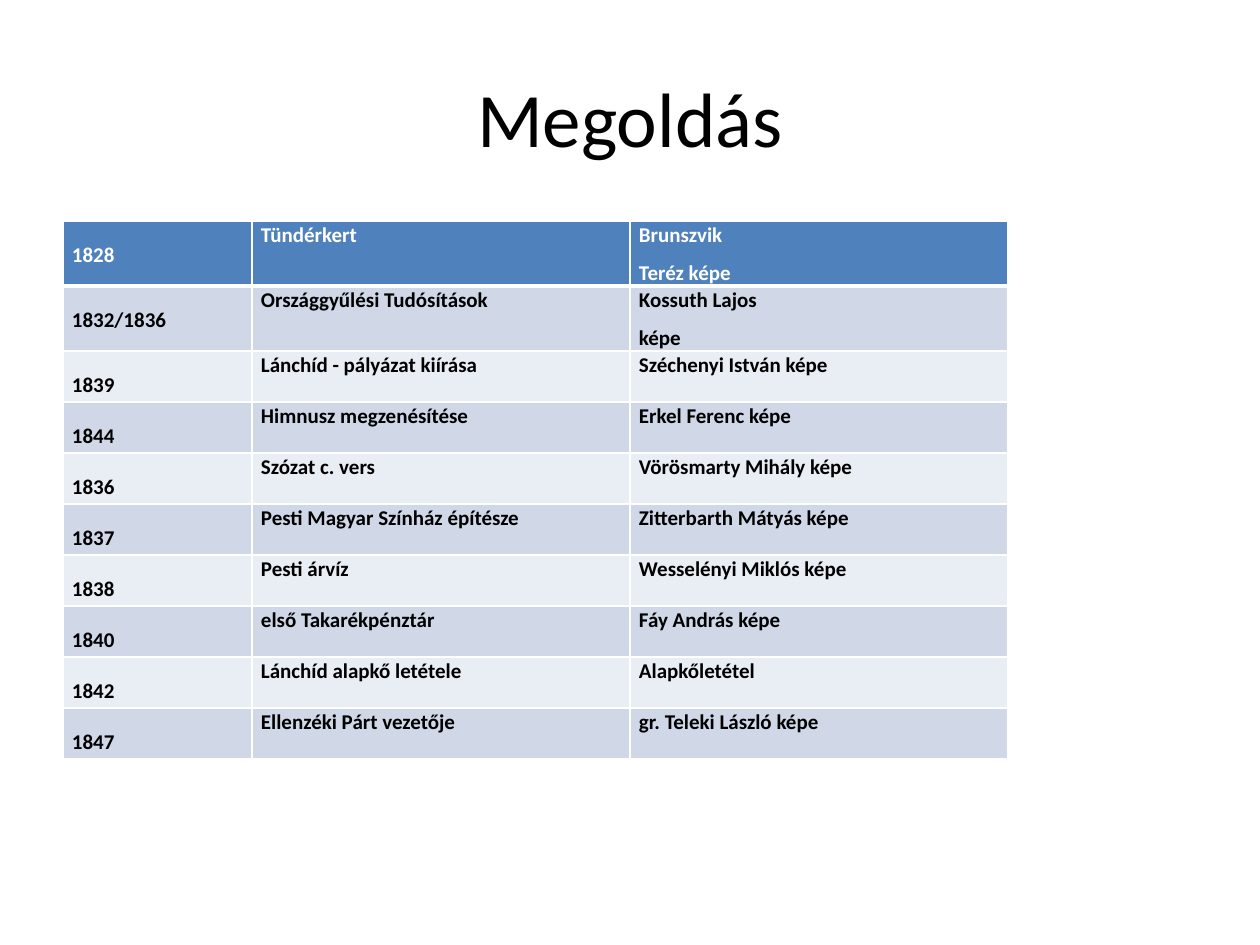
import pptx
import pptx.dml.color
import pptx.enum.text
import pptx.oxml
import pptx.oxml.ns
import pptx.util

TITLE = "Megoldás"
ROWS = [
    ("1828", "Tündérkert", "Brunszvik\nTeréz képe"),
    ("1832/1836", "Országgyűlési Tudósítások", "Kossuth Lajos\nképe"),
    ("1839", "Lánchíd - pályázat kiírása", "Széchenyi István képe"),
    ("1844", "Himnusz megzenésítése", "Erkel Ferenc képe"),
    ("1836", "Szózat c. vers", "Vörösmarty Mihály képe"),
    ("1837", "Pesti Magyar Színház építésze", "Zitterbarth Mátyás képe"),
    ("1838", "Pesti árvíz", "Wesselényi Miklós képe"),
    ("1840", "első Takarékpénztár", "Fáy András képe"),
    ("1842", "Lánchíd alapkő letétele", "Alapkőletétel"),
    ("1847", "Ellenzéki Párt vezetője", "gr. Teleki László képe"),
]
COLORS = {
    "header": "4F81BD",
    "dark band": "D0D8E8",
    "light band": "E9EDF4",
    "white": "FFFFFF",
    "black": "000000",
}
FONT = "Calibri"
SLIDE_SIZE = (1260, 945)
TITLE_BOX = (63, 38, 1134, 157)
TABLE_LEFT, TABLE_TOP = 63, 221
COLUMN_WIDTHS = (189, 378, 378)
TALL_ROW, SHORT_ROW = 65, 51
SIDE_MARGIN, YEAR_TOP_MARGIN = 9, 20


def px(length):
    return pptx.util.Emu(round(length * 914400 / 126))


def rgb(name):
    return pptx.dml.color.RGBColor.from_string(COLORS[name])


def set_values(target, values):
    for name, value in values.items():
        setattr(target, name, value)


def style_font(font, size, color, bold):
    set_values(font, {"name": FONT, "size": pptx.util.Pt(size), "bold": bold})
    font.color.rgb = rgb(color)


def add_borders(cell, widths):
    """Put white border lines, given in points, ahead of the cell's fill."""
    properties = cell._tc.get_or_add_tcPr()
    for position, (side, width) in enumerate(widths.items()):
        line = pptx.oxml.parse_xml(
            f'<a:ln{side} {pptx.oxml.ns.nsdecls("a")} w="{pptx.util.Pt(width)}">'
            f'<a:solidFill><a:srgbClr val="{COLORS["white"]}"/></a:solidFill>'
            f'</a:ln{side}>'
        )
        properties.insert(position, line)


def add_title(slide):
    frame = slide.shapes.add_textbox(*map(px, TITLE_BOX)).text_frame
    set_values(frame, {
        "word_wrap": True,
        "vertical_anchor": pptx.enum.text.MSO_ANCHOR.MIDDLE,
        "text": TITLE,
    })
    paragraph = frame.paragraphs[0]
    paragraph.alignment = pptx.enum.text.PP_ALIGN.CENTER
    style_font(paragraph.runs[0].font, 44, "black", False)


def fill_cell(cell, text, row, column):
    set_values(cell, {
        "text": text,
        "margin_left": px(SIDE_MARGIN),
        "margin_right": px(SIDE_MARGIN),
        "margin_top": px(0 if column else YEAR_TOP_MARGIN),
        "margin_bottom": 0,
        "vertical_anchor": pptx.enum.text.MSO_ANCHOR.TOP,
    })
    band = "header" if row == 0 else "dark band" if row % 2 else "light band"
    cell.fill.solid()
    cell.fill.fore_color.rgb = rgb(band)
    add_borders(cell, {
        "L": 1,
        "R": 1,
        "T": 3 if row == 1 else 1,
        "B": 3 if row == 0 else 1,
    })
    for paragraph in cell.text_frame.paragraphs:
        set_values(paragraph, {
            "line_spacing": 1.07,
            "space_before": pptx.util.Pt((0, 18, 6)[column]),
        })
        style_font(paragraph.runs[0].font, 12, "black" if row else "white", True)


def add_timeline(slide):
    heights = [TALL_ROW if "\n" in row[-1] else SHORT_ROW for row in ROWS]
    table = slide.shapes.add_table(
        len(ROWS), len(COLUMN_WIDTHS), px(TABLE_LEFT), px(TABLE_TOP),
        px(sum(COLUMN_WIDTHS)), px(sum(heights)),
    ).table
    for column, width in zip(table.columns, COLUMN_WIDTHS):
        column.width = px(width)
    for row, (height, texts) in enumerate(zip(heights, ROWS)):
        table.rows[row].height = px(height)
        for column, text in enumerate(texts):
            fill_cell(table.cell(row, column), text, row, column)


def main():
    presentation = pptx.Presentation()
    presentation.slide_width, presentation.slide_height = map(px, SLIDE_SIZE)
    slide = presentation.slides.add_slide(presentation.slide_layouts[6])
    add_title(slide)
    add_timeline(slide)
    presentation.save("out.pptx")


if __name__ == "__main__":
    main()
